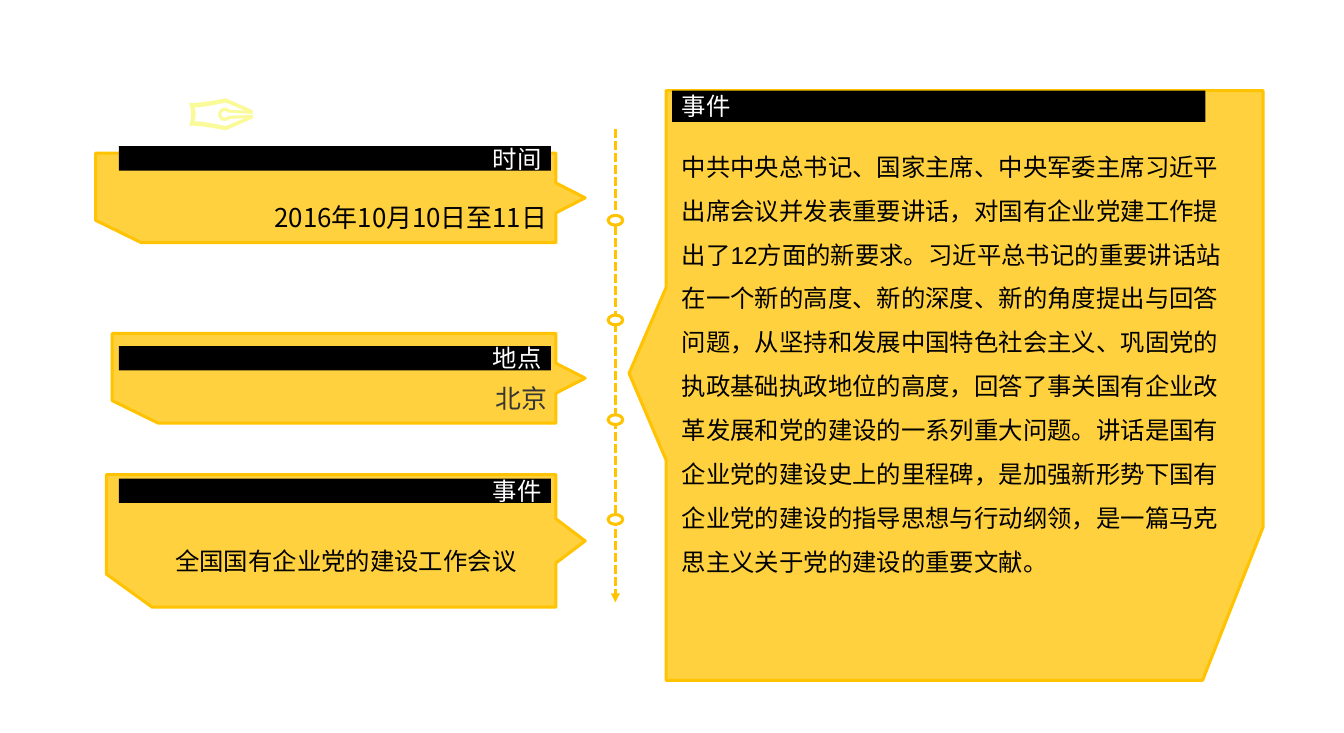
import dataclasses

import pptx
import pptx.dml.color
import pptx.enum.dml
import pptx.enum.shapes
import pptx.enum.text
import pptx.oxml
import pptx.oxml.ns
import pptx.util

CELL = pptx.util.Inches(0.1)
ALIGN = pptx.enum.text.PP_ALIGN
MIDDLE = pptx.enum.text.MSO_ANCHOR.MIDDLE
SHAPE = pptx.enum.shapes.MSO_SHAPE


@dataclasses.dataclass(frozen=True)
class Theme:
    panel: str = "FFD13F"
    outline: str = "FFC301"
    black: str = "000000"
    white: str = "FFFFFF"
    grey: str = "363636"
    pen: str = "FAFA99"
    text_size: float = 18
    value_size: float = 19.1
    pen_size: float = 66.2
    line_width: float = 2.25
    plain_font: str = "Arial"
    chinese_font: str = "Noto Sans CJK SC"
    symbol_font: str = "Noto Sans CJK JP"


THEME = Theme()
TIMELINE = 63.1
BANNER_LEFT, BANNER_WIDTH, BANNER_HEIGHT = 12.2, 44.3, 2.5
PANEL_LEFT, PANEL_TOP, PANEL_RIGHT, PANEL_BOTTOM = 68.3, 9.3, 129.5, 69.8
PANEL_TEXT_LEFT = 68.9


def cells(*counts):
    return [round(count * CELL) for count in counts]


def color(value):
    return pptx.dml.color.RGBColor.from_string(value)


def append_xml(parent, tag, attributes=""):
    namespace = pptx.oxml.ns.nsdecls("a")
    parent.append(pptx.oxml.parse_xml(f"<a:{tag} {namespace} {attributes}/>"))


def paint(shape, fill, outline=None):
    shape.shadow.inherit = False
    shape.fill.solid()
    shape.fill.fore_color.rgb = color(fill)
    if outline:
        shape.line.color.rgb = color(outline)
        shape.line.width = pptx.util.Pt(THEME.line_width)
    else:
        shape.line.fill.background()


def write(box, text, size, font, ink, align=ALIGN.LEFT, spacing=1.0,
          anchor=None, insets=(1, 0.5, 1, 0.5)):
    frame = box.text_frame
    frame.word_wrap = True
    frame.auto_size = pptx.enum.text.MSO_AUTO_SIZE.NONE
    frame.vertical_anchor = anchor or pptx.enum.text.MSO_ANCHOR.TOP
    (frame.margin_left, frame.margin_top,
     frame.margin_right, frame.margin_bottom) = cells(*insets)
    frame.text = text
    para = frame.paragraphs[0]
    para.alignment = align
    para.line_spacing = spacing
    para.space_before = pptx.util.Pt(0)
    properties = para._p.get_or_add_pPr()
    properties.set("marL", "0")
    properties.set("indent", "0")
    append_xml(properties, "buNone")
    para.font.size = pptx.util.Pt(size)
    para.font.color.rgb = color(ink)
    para.font.name = font
    east_asian = THEME.chinese_font if font == THEME.plain_font else font
    append_xml(properties.find(pptx.oxml.ns.qn("a:defRPr")),
               "ea", f'typeface="{east_asian}"')


def add_outline(slide, points):
    start, *others = [cells(*point) for point in points]
    builder = slide.shapes.build_freeform(*start)
    builder.add_line_segments(others, close=True)
    shape = builder.convert_to_shape()
    paint(shape, THEME.panel, THEME.outline)
    return shape


def write_banner(banner, text, align):
    paint(banner, THEME.black)
    write(banner, text, THEME.text_size, THEME.chinese_font, THEME.white,
          align, anchor=MIDDLE, insets=(1, 0, 1, 0))


def add_callout(slide, left, top, height, banner_top, label, text, **style):
    right, tip = 57, 60
    callout = add_outline(slide, [
        (left, top), (right, top), (right, top + height / 3),
        (tip, top + height / 2), (right, top + height * 2 / 3),
        (right, top + height), (left + 4.7, top + height),
        (left, top + height * 3 / 4)])
    write(callout, text, spacing=1.2, anchor=MIDDLE,
          insets=(3.9, 3.9, 3.9, 0.5), **style)
    banner = slide.shapes.add_shape(SHAPE.RECTANGLE, *cells(
        BANNER_LEFT, banner_top, BANNER_WIDTH, BANNER_HEIGHT))
    write_banner(banner, label, ALIGN.RIGHT)


def add_timeline(slide):
    axis = slide.shapes.add_connector(
        pptx.enum.shapes.MSO_CONNECTOR.STRAIGHT,
        *cells(TIMELINE, 13.2, TIMELINE, 61.8))
    axis.line.color.rgb = color(THEME.outline)
    axis.line.width = pptx.util.Pt(THEME.line_width)
    axis.line.dash_style = pptx.enum.dml.MSO_LINE.SQUARE_DOT
    append_xml(axis.line._get_or_add_ln(), "tailEnd", 'type="triangle"')
    append_xml(axis._element.spPr, "effectLst")
    width, height = 1.5, 1
    for step in range(4):
        dot = slide.shapes.add_shape(SHAPE.OVAL, *cells(
            TIMELINE - width / 2, 22.1 + 10.23 * step, width, height))
        paint(dot, THEME.white, THEME.outline)


def place(placeholder, left, top, width, height):
    placeholder.left, placeholder.top, placeholder.width, placeholder.height = (
        cells(left, top, width, height))
    element = placeholder._element
    element.getparent().append(element)


def add_event_panel(slide, text):
    add_outline(slide, [
        (PANEL_RIGHT, PANEL_TOP), (PANEL_LEFT, PANEL_TOP), (PANEL_LEFT, 29.5),
        (64.5, 38.3), (PANEL_LEFT, 47.2), (PANEL_LEFT, PANEL_BOTTOM),
        (123.3, PANEL_BOTTOM), (PANEL_RIGHT, 54.1)])
    title, body = slide.placeholders
    place(title, PANEL_TEXT_LEFT, PANEL_TOP, 54.7, 3.2)
    write_banner(title, "事件", ALIGN.LEFT)
    place(body, PANEL_TEXT_LEFT, 13.6, 57.9, 42)
    write(body, text, THEME.text_size, THEME.plain_font, THEME.black,
          spacing=1.5)


def main():
    deck = pptx.Presentation()
    deck.slide_width = pptx.util.Inches(13.78)
    deck.slide_height = pptx.util.Inches(7.52)
    slide = deck.slides.add_slide(deck.slide_layouts[1])

    pen = slide.shapes.add_textbox(*cells(18, 5.4, 9.1, 12.2))
    write(pen, "✑", THEME.pen_size, THEME.symbol_font, THEME.pen)

    add_timeline(slide)
    value = dict(size=THEME.value_size, font=THEME.chinese_font,
                 align=ALIGN.RIGHT)
    add_callout(slide, 9.8, 15.7, 9.2, 15, "时间", "2016年10月10日至11日",
                ink=THEME.black, **value)
    add_callout(slide, 11.5, 34.2, 9.2, 35.5, "地点", "北京",
                ink=THEME.grey, **value)
    add_callout(slide, 10.9, 48.7, 13.6, 49.1, "事件",
                "全国国有企业党的建设工作会议", ink=THEME.black,
                size=THEME.text_size, font=THEME.plain_font,
                align=ALIGN.CENTER)
    add_event_panel(slide, (
        "中共中央总书记、国家主席、中央军委主席习近平出席会议并发表重要讲话，"
        "对国有企业党建工作提出了12方面的新要求。"
        "习近平总书记的重要讲话站在一个新的高度、新的深度、新的角度提出与回答问题，"
        "从坚持和发展中国特色社会主义、巩固党的执政基础执政地位的高度，"
        "回答了事关国有企业改革发展和党的建设的一系列重大问题。"
        "讲话是国有企业党的建设史上的里程碑，"
        "是加强新形势下国有企业党的建设的指导思想与行动纲领，"
        "是一篇马克思主义关于党的建设的重要文献。"))
    deck.save("out.pptx")


if __name__ == "__main__":
    main()
